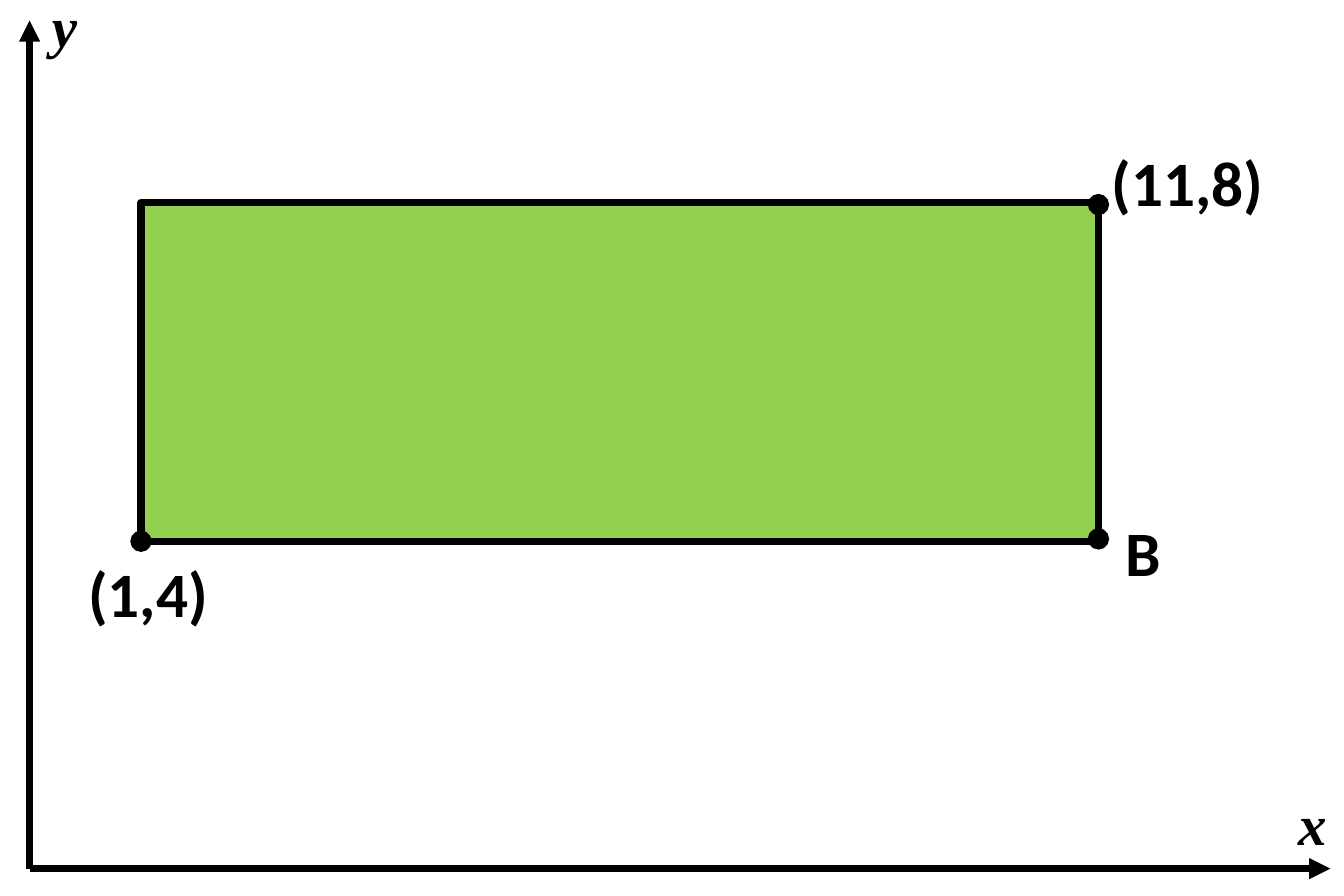
from lxml import etree
from pptx import Presentation
from pptx.dml.color import RGBColor
from pptx.enum import shapes, text
from pptx.oxml.ns import qn
from pptx.util import Inches, Pt

BLACK = "000000"
GREEN = "92D050"


def color(hex_value):
    return RGBColor.from_string(hex_value)


def add_filled_shape(kind, left, top, width, height, fill, line_width):
    shape = slide.shapes.add_shape(
        kind, Inches(left), Inches(top), Inches(width), Inches(height))
    shape.shadow.inherit = False
    shape.fill.solid()
    shape.fill.fore_color.rgb = color(fill)
    shape.line.color.rgb = color(BLACK)
    shape.line.width = Pt(line_width)


presentation = Presentation()
presentation.slide_width = Inches(5.91)
presentation.slide_height = Inches(3.94)
slide = presentation.slides.add_slide(presentation.slide_layouts[6])

# Axes, both starting at the origin
origin_x, origin_y = 0.13, 3.82
for end_x, end_y in [(origin_x, 0.09), (5.85, origin_y)]:
    axis = slide.shapes.add_connector(
        shapes.MSO_CONNECTOR.STRAIGHT,
        Inches(origin_x), Inches(origin_y), Inches(end_x), Inches(end_y))
    axis.line.color.rgb = color(BLACK)
    axis.line.width = Pt(2.25)
    etree.SubElement(axis.line._get_or_add_ln(), qn("a:tailEnd"), type="triangle")
    etree.SubElement(axis._element.spPr, qn("a:effectLst"))

# Rectangle
add_filled_shape(shapes.MSO_SHAPE.RECTANGLE, 0.62, 0.89, 4.21, 1.49, GREEN, 2.25)

# Corner points, given by their centres
dot_size = 0.08
for center_x, center_y in [(4.83, 0.9), (0.62, 2.38), (4.83, 2.37)]:
    add_filled_shape(
        shapes.MSO_SHAPE.OVAL, center_x - dot_size / 2, center_y - dot_size / 2,
        dot_size, dot_size, BLACK, 1)

# Axis names and point labels
labels = [
    ("y", 0.13, -0.09, 0.31, 0.4, "Times New Roman", 18, True),
    ("x", 5.61, 3.42, 0.33, 0.4, "Times New Roman", 18, True),
    ("B", 4.85, 2.21, 0.37, 0.44, "Calibri", 20, False),
    ("(1,4)", 0.29, 2.39, 0.73, 0.44, "Calibri", 20, False),
    ("(11,8)", 4.79, 0.58, 0.88, 0.44, "Calibri", 20, False),
]
for wording, left, top, width, height, font_name, size, italic in labels:
    label = slide.shapes.add_textbox(
        Inches(left), Inches(top), Inches(width), Inches(height))
    label.text_frame.word_wrap = False
    label.text_frame.auto_size = text.MSO_AUTO_SIZE.SHAPE_TO_FIT_TEXT
    label.text_frame.text = wording
    font = label.text_frame.paragraphs[0].runs[0].font
    font.name = font_name
    font.size = Pt(size)
    font.bold = True
    font.italic = italic
    font.color.rgb = color(BLACK)

presentation.save("out.pptx")
